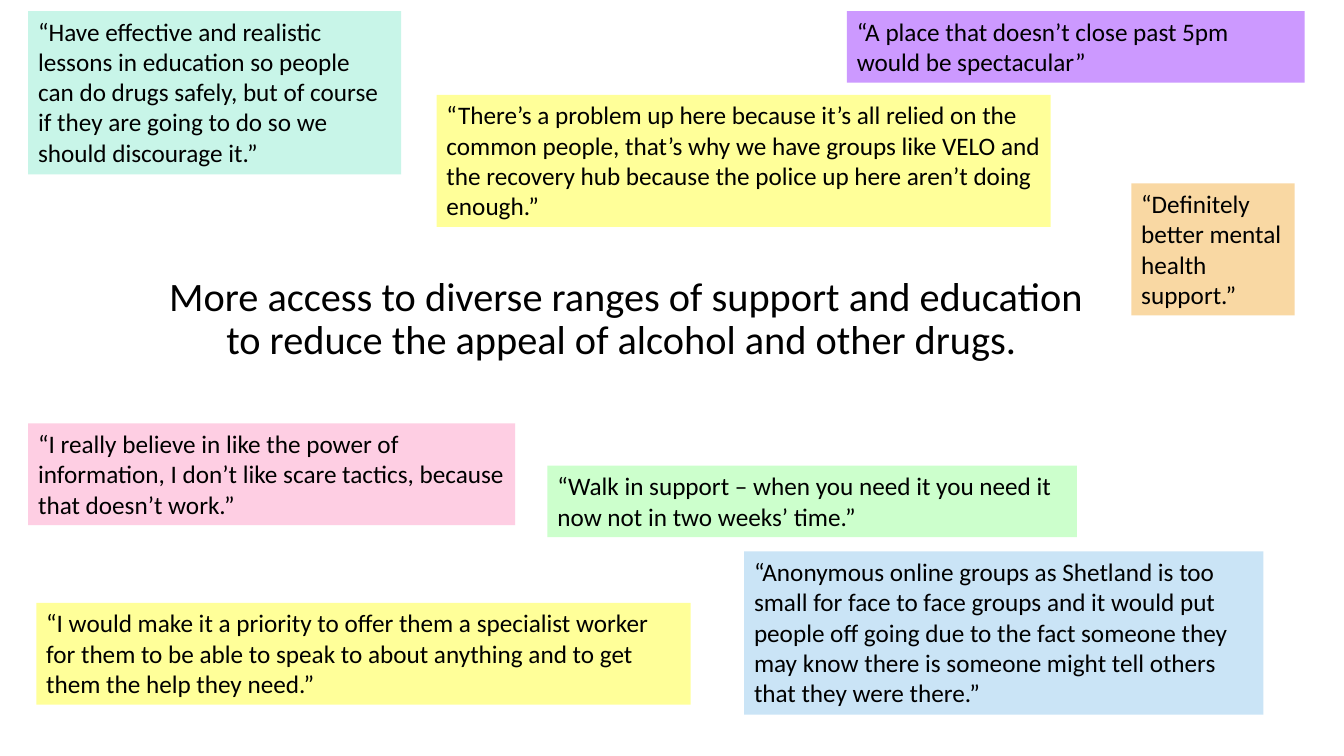
from dataclasses import dataclass

from pptx import Presentation
from pptx import util as u
from pptx.dml.color import RGBColor
from pptx.enum import shapes, text


@dataclass(frozen=True)
class Theme:
    font: str = "Calibri"
    ink: str = "000000"
    title: float = 28.8
    body: float = 18
    mint: str = "C8F5E8"
    pink: str = "FECEE3"
    purple: str = "CC99FF"
    yellow: str = "FFFF99"
    blue: str = "CAE4F6"
    orange: str = "F9D8A3"
    green: str = "CCFFCC"


def write(frame, words, *, font, size, color, align, anchor, spacing=1.0):
    frame.word_wrap = True
    frame.vertical_anchor = anchor
    para = frame.paragraphs[0]
    para.alignment = align
    para.line_spacing = spacing
    run = para.add_run()
    run.text = words
    run.font.name = font
    run.font.size = u.Pt(size)
    run.font.color.rgb = RGBColor.from_string(color)


class Board:
    def __init__(self, slide, theme):
        self.slide = slide
        self.theme = theme

    def title(self, words, box):
        shape = self.slide.shapes.title
        shape.left, shape.top, shape.width, shape.height = map(u.Inches, box)
        shape.text_frame.auto_size = text.MSO_AUTO_SIZE.NONE
        write(shape.text_frame, words, font=self.theme.font,
              size=self.theme.title, color=self.theme.ink,
              align=text.PP_ALIGN.CENTER, anchor=text.MSO_ANCHOR.MIDDLE,
              spacing=0.9)

    def quote(self, words, box, fill):
        shape = self.slide.shapes.add_shape(
            shapes.MSO_SHAPE.RECTANGLE, *map(u.Inches, box))
        shape.shadow.inherit = False
        shape.fill.solid()
        shape.fill.fore_color.rgb = RGBColor.from_string(fill)
        shape.line.fill.background()
        shape.text_frame.auto_size = text.MSO_AUTO_SIZE.SHAPE_TO_FIT_TEXT
        write(shape.text_frame, words, font=self.theme.font,
              size=self.theme.body, color=self.theme.ink,
              align=text.PP_ALIGN.LEFT, anchor=text.MSO_ANCHOR.TOP)


def main():
    deck = Presentation()
    deck.slide_width, deck.slide_height = u.Inches(13.33), u.Inches(7.5)
    theme = Theme()
    board = Board(deck.slides.add_slide(deck.slide_layouts[5]), theme)

    board.title("More access to diverse ranges of support and education "
                "to reduce the appeal of alcohol and other drugs. ",
                (1.52, 2.45, 9.38, 1.45))

    quotes = [
        ("“Have effective and realistic lessons in education so people can do "
         "drugs safely, but of course if they are going to do so we should "
         "discourage it.”", (0.28, 0.11, 3.7, 1.62), theme.mint),
        ("“I really believe in like the power of information, I don’t like "
         "scare tactics, because that doesn’t work.”",
         (0.28, 4.2, 4.83, 1.01), theme.pink),
        ("“A place that doesn’t close past 5pm would be spectacular”",
         (8.4, 0.11, 4.54, 0.71), theme.purple),
        ("“I would make it a priority to offer them a specialist worker for "
         "them to be able to speak to about anything and to get them the help "
         "they need.”", (0.36, 5.98, 6.49, 1.01), theme.yellow),
        ("“There’s a problem up here because it’s all relied on the common "
         "people, that’s why we have groups like VELO and the recovery hub "
         "because the police up here aren’t doing enough.”",
         (4.33, 0.94, 6.09, 1.31), theme.yellow),
        ("“Anonymous online groups as Shetland is too small for face to face "
         "groups and it would put people off going due to the fact someone "
         "they may know there is someone might tell others that they were "
         "there.”", (7.38, 5.47, 5.15, 1.62), theme.blue),
        ("“Definitely better mental health support.”",
         (11.22, 1.82, 1.62, 1.31), theme.orange),
        ("“Walk in support – when you need it you need it now not in two "
         "weeks’ time.”", (5.43, 4.62, 5.25, 0.71), theme.green),
    ]
    for words, box, fill in quotes:
        board.quote(words, box, fill)

    deck.save("out.pptx")


if __name__ == "__main__":
    main()
